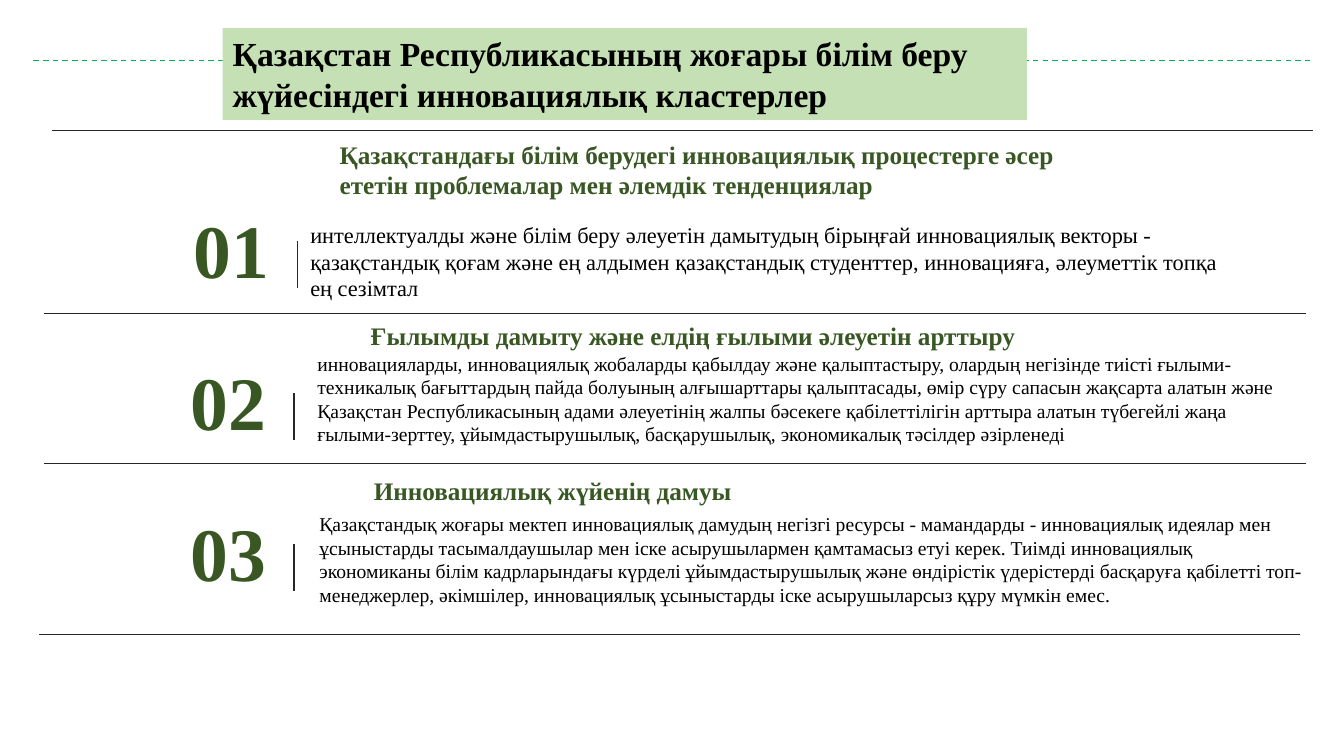
from dataclasses import dataclass

from lxml import etree
from pptx import Presentation
from pptx.dml.color import RGBColor
from pptx.enum.dml import MSO_LINE
from pptx.enum.shapes import MSO_CONNECTOR
from pptx.enum.text import MSO_ANCHOR, MSO_AUTO_SIZE, PP_ALIGN
from pptx.oxml.ns import qn
from pptx.util import Cm, Pt

STRAIGHT = MSO_CONNECTOR.STRAIGHT
DASH = MSO_LINE.DASH
LEFT, CENTER = PP_ALIGN.LEFT, PP_ALIGN.CENTER
TOP = MSO_ANCHOR.TOP
NO_FIT = MSO_AUTO_SIZE.NONE
TITLE_ONLY = 5


@dataclass(frozen=True)
class Theme:
    font: str = "Times New Roman"
    black: RGBColor = RGBColor(0x00, 0x00, 0x00)
    accent: RGBColor = RGBColor(0x38, 0x57, 0x23)
    title_fill: RGBColor = RGBColor(0xC5, 0xE0, 0xB4)
    rule: RGBColor = RGBColor(0x26, 0x26, 0x26)
    dash: RGBColor = RGBColor(0x00, 0xB0, 0x50)
    title_size: int = 24
    heading_size: int = 18
    number_size: int = 54


THEME = Theme()


@dataclass(frozen=True)
class Section:
    """One numbered block; box, and parts relative to it, in cm."""
    number: str
    heading: str
    body: str
    body_size: int
    box: tuple
    number_at: tuple
    heading_box: tuple
    body_box: tuple


TITLE = "Қазақстан Республикасының жоғары білім беру жүйесіндегі инновациялық кластерлер"
TITLE_BOX = (5.61, 0.71, 20.27, 2.31)
RULE_WIDTH = 31.78
CLOSING_RULE = (0.99, 15.98)

SECTIONS = [
    Section(
        "01",
        "Қазақстандағы білім берудегі инновациялық процестерге әсер ететін "
        "проблемалар мен әлемдік тенденциялар",
        "интеллектуалды және білім беру әлеуетін дамытудың бірыңғай инновациялық "
        "векторы - қазақстандық қоғам және ең алдымен қазақстандық студенттер, "
        "инновацияға, әлеуметтік топқа ең сезімтал",
        16, (1.3, 3.28), (2.74, 1.7), (7.01, 0.1, 20.17, 1.8), (6.27, 2.16, 23.93, 2.31)),
    Section(
        "02",
        "Ғылымды дамыту және елдің ғылыми әлеуетін арттыру",
        "инновацияларды, инновациялық жобаларды қабылдау және қалыптастыру, олардың "
        "негізінде тиісті ғылыми-техникалық бағыттардың пайда болуының алғышарттары "
        "қалыптасады, өмір сүру сапасын жақсарта алатын және Қазақстан Республикасының "
        "адами әлеуетінің жалпы бәсекеге қабілеттілігін арттыра алатын түбегейлі жаңа "
        "ғылыми-зерттеу, ұйымдастырушылық, басқарушылық, экономикалық тәсілдер әзірленеді",
        14, (1.12, 7.9), (2.84, 0.91), (7.97, 0.05, 21.44, 1.02), (6.63, 0.84, 25.2, 2.64)),
    Section(
        "03",
        "Инновациялық жүйенің дамуы",
        "Қазақстандық жоғары мектеп инновациялық дамудың негізгі ресурсы - мамандарды - "
        "инновациялық идеялар мен ұсыныстарды тасымалдаушылар мен іске асырушылармен "
        "қамтамасыз етуі керек. Тиімді инновациялық экономиканы білім кадрларындағы "
        "күрделі ұйымдастырушылық және өндірістік үдерістерді басқаруға қабілетті "
        "топ-менеджерлер, әкімшілер, инновациялық ұсыныстарды іске асырушыларсыз "
        "құру мүмкін емес.",
        14, (1.12, 11.68), (2.84, 0.94), (8.05, 0.18, 20.7, 1.02), (6.68, 1.1, 25.35, 2.64)),
]


def write_text(frame, text, size, color=THEME.black, bold=False, align=LEFT):
    frame.word_wrap = True
    frame.auto_size = NO_FIT
    frame.vertical_anchor = TOP
    para = frame.paragraphs[0]
    para.alignment = align
    para.line_spacing = 1.0
    para.space_before = Pt(0)
    span = para.add_run()
    span.text = text
    font = span.font
    font.name, font.size, font.bold = THEME.font, Pt(size), bold
    font.color.rgb = color


def add_text(page, box, text, size, **style):
    text_box = page.shapes.add_textbox(*map(Cm, box))
    write_text(text_box.text_frame, text, size, **style)


def add_line(page, left, top, width=0, height=0, color=THEME.rule, weight=0.5, dash=None):
    ends = map(Cm, (left, top, left + width, top + height))
    line = page.shapes.add_connector(STRAIGHT, *ends)
    line.line.color.rgb = color
    line.line.width = Pt(weight)
    if dash:
        line.line.dash_style = dash
    etree.SubElement(line.element.spPr, qn("a:effectLst"))


def add_title(page, box):
    """Place the title band over the dashed lines that run out to both sides."""
    left, top, width, height = box
    for offset in (-4.77, 15.52):
        add_line(page, left + offset, top + 0.82, width=11.89,
                 color=THEME.dash, weight=1, dash=DASH)
    title = page.shapes.title
    title.left, title.top, title.width, title.height = map(Cm, box)
    title.fill.solid()
    title.fill.fore_color.rgb = THEME.title_fill
    write_text(title.text_frame, TITLE, THEME.title_size, bold=True)
    title.element.getparent().append(title.element)


def add_section(page, section):
    left, top = section.box

    def place(x, y, *size):
        return (left + x, top + y, *size)

    add_line(page, left, top, width=RULE_WIDTH)
    add_text(page, place(*section.body_box), section.body, section.body_size)
    add_text(page, place(*section.heading_box), section.heading, THEME.heading_size,
             color=THEME.accent, bold=True)
    number_left, number_top = place(*section.number_at)
    add_text(page, (number_left, number_top, 3.58, 2.57), section.number,
             THEME.number_size, color=THEME.accent, bold=True, align=CENTER)
    add_line(page, number_left + 3.45, number_top + 1.1, height=1.18, weight=1)


def main():
    deck = Presentation()
    deck.slide_width, deck.slide_height = Cm(33.87), Cm(19.05)
    page = deck.slides.add_slide(deck.slide_layouts[TITLE_ONLY])
    add_title(page, TITLE_BOX)
    for section in SECTIONS:
        add_section(page, section)
    add_line(page, *CLOSING_RULE, width=RULE_WIDTH)
    deck.save("out.pptx")


if __name__ == "__main__":
    main()
